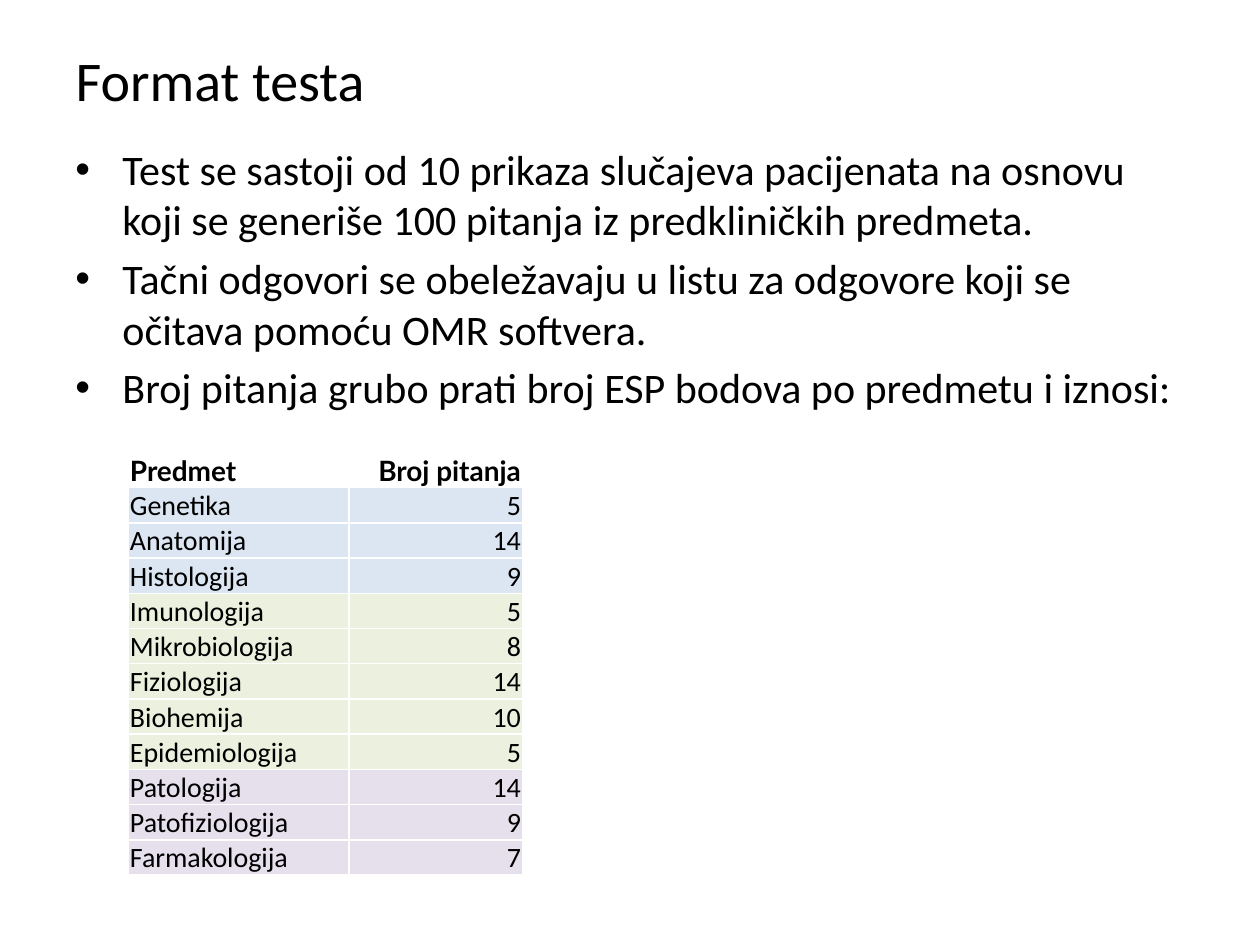
import pptx
import pptx.dml.color
import pptx.enum.text
import pptx.oxml.ns
import pptx.util
from lxml import etree

Cm = pptx.util.Cm
Pt = pptx.util.Pt
ALIGN = pptx.enum.text.PP_ALIGN
ANCHOR = pptx.enum.text.MSO_ANCHOR
qn = pptx.oxml.ns.qn

COLORS = {
    "text": "000000",
    "border": "FFFFFF",
    "first year": "DCE6F2",
    "second year": "EBF1DE",
    "third year": "E6E0EC",
}
STATEMENTS = [
    "Test se sastoji od 10 prikaza slučajeva pacijenata na osnovu "
    "koji se generiše 100 pitanja iz predkliničkih predmeta.",
    "Tačni odgovori se obeležavaju u listu za odgovore koji se "
    "očitava pomoću OMR softvera.",
    "Broj pitanja grubo prati broj ESP bodova po predmetu i iznosi:",
]
SUBJECTS = [
    ("Predmet", "Broj pitanja", None),
    ("Genetika", "5", "first year"),
    ("Anatomija", "14", "first year"),
    ("Histologija", "9", "first year"),
    ("Imunologija", "5", "second year"),
    ("Mikrobiologija", "8", "second year"),
    ("Fiziologija", "14", "second year"),
    ("Biohemija", "10", "second year"),
    ("Epidemiologija", "5", "second year"),
    ("Patologija", "14", "third year"),
    ("Patofiziologija", "9", "third year"),
    ("Farmakologija", "7", "third year"),
]


def write(paragraph, text, size=16, font="Calibri", bold=False, align=ALIGN.LEFT):
    paragraph.alignment = align
    run = paragraph.add_run()
    run.text = text
    run.font.size = Pt(size)
    run.font.name = font
    run.font.bold = bold
    run.font.color.rgb = pptx.dml.color.RGBColor.from_string(COLORS["text"])


def add_borders(cell):
    properties = cell._tc.get_or_add_tcPr()
    for side in ("lnL", "lnR", "lnT", "lnB"):
        line = etree.SubElement(properties, qn(f"a:{side}"), w=str(Pt(1)))
        fill = etree.SubElement(line, qn("a:solidFill"))
        etree.SubElement(fill, qn("a:srgbClr"), val=COLORS["border"])


presentation = pptx.Presentation()
presentation.slide_width = Cm(25.4)
presentation.slide_height = Cm(19.05)
slide = presentation.slides.add_slide(presentation.slide_layouts[5])

# Title
title = slide.shapes.title
title.left, title.top, title.width, title.height = Cm(1.27), Cm(0), Cm(22.86), Cm(3.18)
title.text_frame.vertical_anchor = ANCHOR.MIDDLE
write(title.text_frame.paragraphs[0], "Format testa", size=32)

# Bulleted statements
body = slide.shapes.add_textbox(Cm(1.27), Cm(2.77), Cm(22.86), Cm(6.07)).text_frame
body.word_wrap = True
for number, statement in enumerate(STATEMENTS):
    paragraph = body.add_paragraph() if number else body.paragraphs[0]
    paragraph.space_before = Pt(4.8)
    write(paragraph, statement, size=24)
    properties = paragraph._p.get_or_add_pPr()
    properties.set("marL", str(Cm(0.95)))
    properties.set("indent", str(-Cm(0.95)))
    etree.SubElement(properties, qn("a:buFont"), typeface="Arial")
    etree.SubElement(properties, qn("a:buChar"), char="•")

# Questions per subject
questions = slide.shapes.add_table(
    len(SUBJECTS), 2, Cm(2.59), Cm(9.12), Cm(7.94), Cm(8.52)
).table
questions.horz_banding = False
questions.columns[0].width = Cm(4.45)
questions.columns[1].width = Cm(3.49)
for row, (subject, count, year) in enumerate(SUBJECTS):
    header = year is None
    for column, (text, align) in enumerate([(subject, ALIGN.LEFT), (count, ALIGN.RIGHT)]):
        cell = questions.cell(row, column)
        cell.margin_left = cell.margin_right = cell.margin_top = Cm(0.03)
        cell.margin_bottom = Cm(0)
        cell.vertical_anchor = ANCHOR.BOTTOM
        add_borders(cell)
        if header:
            cell.fill.background()
        else:
            cell.fill.solid()
            cell.fill.fore_color.rgb = pptx.dml.color.RGBColor.from_string(COLORS[year])
        write(cell.text_frame.paragraphs[0], text, align=align, bold=header,
              font="Lato" if header else "Calibri")

presentation.save("out.pptx")
